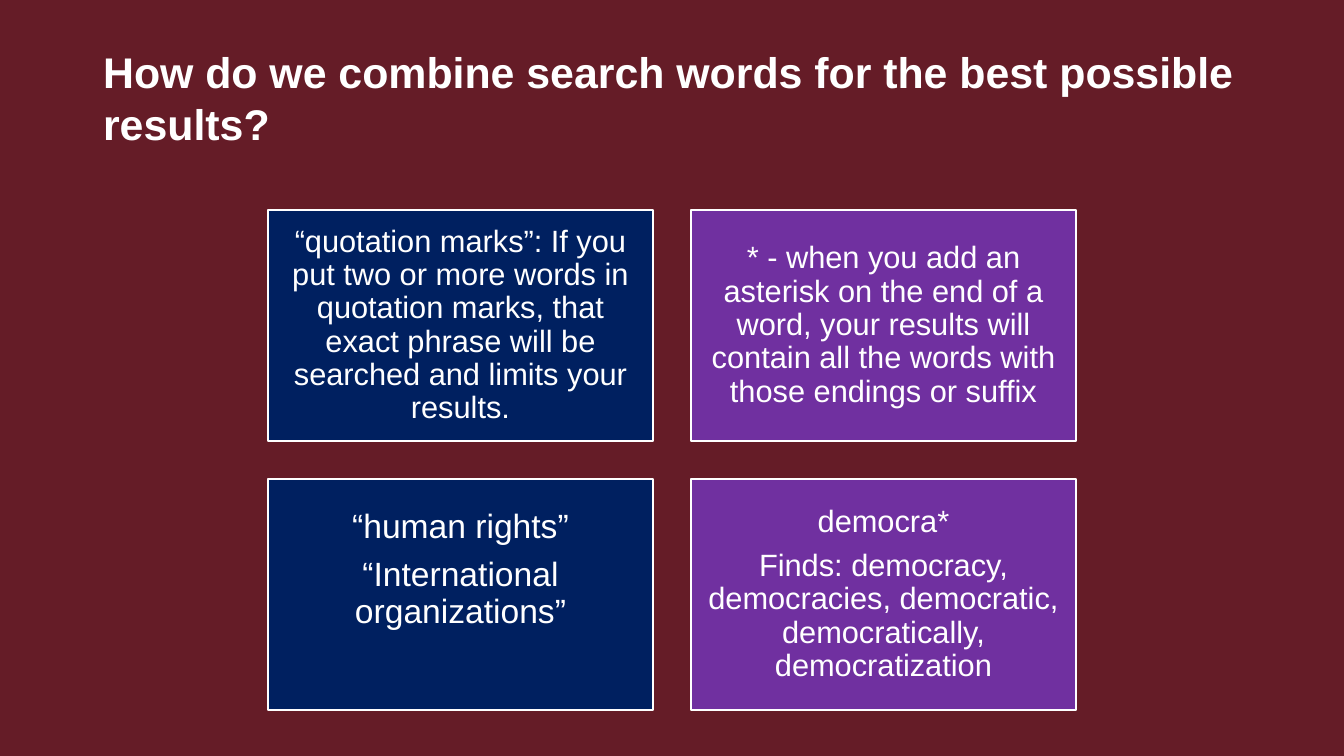
from pptx import Presentation
from pptx.dml.color import RGBColor
from pptx.enum.shapes import MSO_SHAPE
from pptx.enum.text import MSO_ANCHOR, MSO_AUTO_SIZE, PP_ALIGN
from pptx.util import Pt

RECTANGLE = MSO_SHAPE.RECTANGLE
MIDDLE = MSO_ANCHOR.MIDDLE
NO_FIT = MSO_AUTO_SIZE.NONE
LEFT, CENTER = PP_ALIGN.LEFT, PP_ALIGN.CENTER

MAROON = RGBColor(0x65, 0x1C, 0x27)
NAVY = RGBColor(0x00, 0x20, 0x60)
PURPLE = RGBColor(0x70, 0x30, 0xA0)
WHITE = RGBColor(0xFF, 0xFF, 0xFF)

FONT = "Arial"
EMU_PER_PX = 9071.43
TITLE_ONLY = 5
COLUMNS = 2
GAP = 38

TITLE = "How do we combine search words for the best possible results?"
CARDS = [
    (NAVY, 22, 9, ["“quotation marks”: If you put two or more words in quotation marks, "
                   "that exact phrase will be searched and limits your results."]),
    (PURPLE, 22, 9, ["* - when you add an asterisk on the end of a word, your results will "
                     "contain all the words with those endings or suffix"]),
    (NAVY, 24, 58, ["“human rights”", "“International organizations”"]),
    (PURPLE, 22, 9, ["democra*", "Finds: democracy, democracies, democratic, "
                                 "democratically, democratization"]),
]


def px(length):
    return round(length * EMU_PER_PX)


def add_run(paragraph, text, size, bold=False):
    run = paragraph.add_run()
    run.text = text
    run.font.name = FONT
    run.font.size = Pt(size)
    run.font.bold = bold
    run.font.color.rgb = WHITE


def add_title(slide, left, top, width, height):
    title = slide.shapes.title
    title.left, title.top = px(left), px(top)
    title.width, title.height = px(width), px(height)
    frame = title.text_frame
    frame.word_wrap = True
    frame.auto_size = NO_FIT
    frame.vertical_anchor = MIDDLE
    paragraph = frame.paragraphs[0]
    paragraph.alignment = LEFT
    add_run(paragraph, TITLE, 30.6, bold=True)


def add_card(slide, left, top, width, height, color, size, bottom_inset, texts):
    card = slide.shapes.add_shape(RECTANGLE, px(left), px(top), px(width), px(height))
    card.shadow.inherit = False
    card.fill.solid()
    card.fill.fore_color.rgb = color
    card.line.color.rgb = WHITE
    card.line.width = Pt(1)
    frame = card.text_frame
    frame.word_wrap = True
    frame.vertical_anchor = MIDDLE
    frame.margin_left = frame.margin_right = frame.margin_top = px(9)
    frame.margin_bottom = px(bottom_inset)
    for index, text in enumerate(texts):
        paragraph = frame.add_paragraph() if index else frame.paragraphs[0]
        paragraph.alignment = CENTER
        paragraph.line_spacing = 0.9
        paragraph.space_after = Pt(round(size * 0.35, 1))
        add_run(paragraph, text, size)


def add_card_grid(slide, left, top, width, height):
    rows = len(CARDS) // COLUMNS
    card_width = (width - GAP * (COLUMNS - 1)) // COLUMNS
    card_height = (height - GAP * (rows - 1)) // rows
    for index, card in enumerate(CARDS):
        row, column = divmod(index, COLUMNS)
        add_card(slide, left + column * (card_width + GAP), top + row * (card_height + GAP),
                 card_width, card_height, *card)


def main():
    presentation = Presentation()
    presentation.slide_width, presentation.slide_height = px(1344), px(756)
    slide = presentation.slides.add_slide(presentation.slide_layouts[TITLE_ONLY])
    slide.background.fill.solid()
    slide.background.fill.fore_color.rgb = MAROON
    add_title(slide, 93, 38, 1158, 119)
    add_card_grid(slide, 268, 210, 808, 500)
    presentation.save("out.pptx")


if __name__ == "__main__":
    main()
